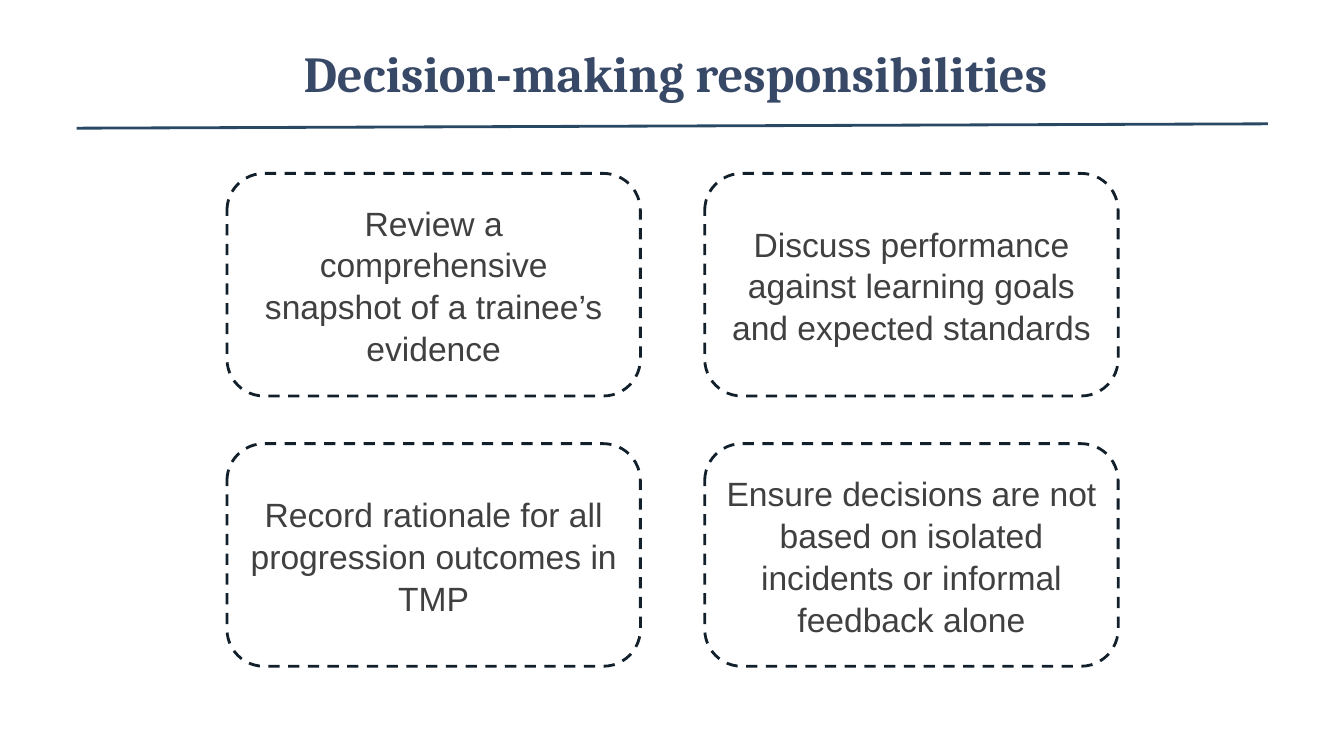
import pptx
import pptx.util
import pptx.dml.color
import pptx.enum.dml
import pptx.enum.shapes
import pptx.enum.text
from dataclasses import dataclass
from lxml import etree

Cm, Pt = pptx.util.Cm, pptx.util.Pt
rgb = pptx.dml.color.RGBColor.from_string


@dataclass(frozen=True)
class Theme:
    title_color = rgb("384967")
    rule_color = rgb("294864")
    card_fill = rgb("FFFFFF")
    card_line = rgb("12202C")
    card_text = rgb("404040")
    title_font = "Cambria"
    body_font = "Arial"
    title_size = Pt(36)
    body_size = Pt(24)
    line_width = Pt(2)


def write_text(sp, text, font, size, color, bold=False):
    """Put one centred, wrapped paragraph in the middle of sp."""
    tf = sp.text_frame
    tf.word_wrap = True
    tf.vertical_anchor = pptx.enum.text.MSO_ANCHOR.MIDDLE
    p = tf.paragraphs[0]
    p.text = text
    p.alignment = pptx.enum.text.PP_ALIGN.CENTER
    p.font.name, p.font.size, p.font.bold = font, size, bold
    p.font.color.rgb = color
    return p


theme = Theme()
prs = pptx.Presentation()
prs.slide_width, prs.slide_height = Cm(33.87), Cm(19.05)
slide = prs.slides.add_slide(prs.slide_layouts[6])

# Title and rule
rule = slide.shapes.add_connector(
    pptx.enum.shapes.MSO_CONNECTOR.STRAIGHT, Cm(1.93), Cm(3.23), Cm(31.95), Cm(3.12))
rule.line.color.rgb = theme.rule_color
rule.line.width = theme.line_width
etree.SubElement(rule._element.spPr, pptx.oxml.ns.qn("a:effectLst"))

title = slide.shapes.add_textbox(Cm(0), Cm(0.81), Cm(34.04), Cm(2.01))
write_text(title, "Decision-making responsibilities",
           theme.title_font, theme.title_size, theme.title_color, bold=True)

# Two by two grid of responsibilities
responsibilities = [
    ["Review a comprehensive snapshot of a trainee’s evidence",
     "Discuss performance against learning goals and expected standards"],
    ["Record rationale for all progression outcomes in TMP",
     "Ensure decisions are not based on isolated incidents or informal feedback alone"],
]
left, top = 5.72, 4.37
width, height = 10.42, 5.61
step_x, step_y = 12.04, 6.81

cards = slide.shapes.add_group_shape()
for row, texts in enumerate(responsibilities):
    for col, text in enumerate(texts):
        sp = cards.shapes.add_shape(
            pptx.enum.shapes.MSO_SHAPE.ROUNDED_RECTANGLE,
            Cm(left + col * step_x), Cm(top + row * step_y), Cm(width), Cm(height))
        sp.shadow.inherit = False
        sp.fill.solid()
        sp.fill.fore_color.rgb = theme.card_fill
        sp.line.color.rgb = theme.card_line
        sp.line.width = theme.line_width
        sp.line.dash_style = pptx.enum.dml.MSO_LINE.DASH
        p = write_text(sp, text, theme.body_font, theme.body_size, theme.card_text)
        p.line_spacing = 1.04

prs.save("out.pptx")
